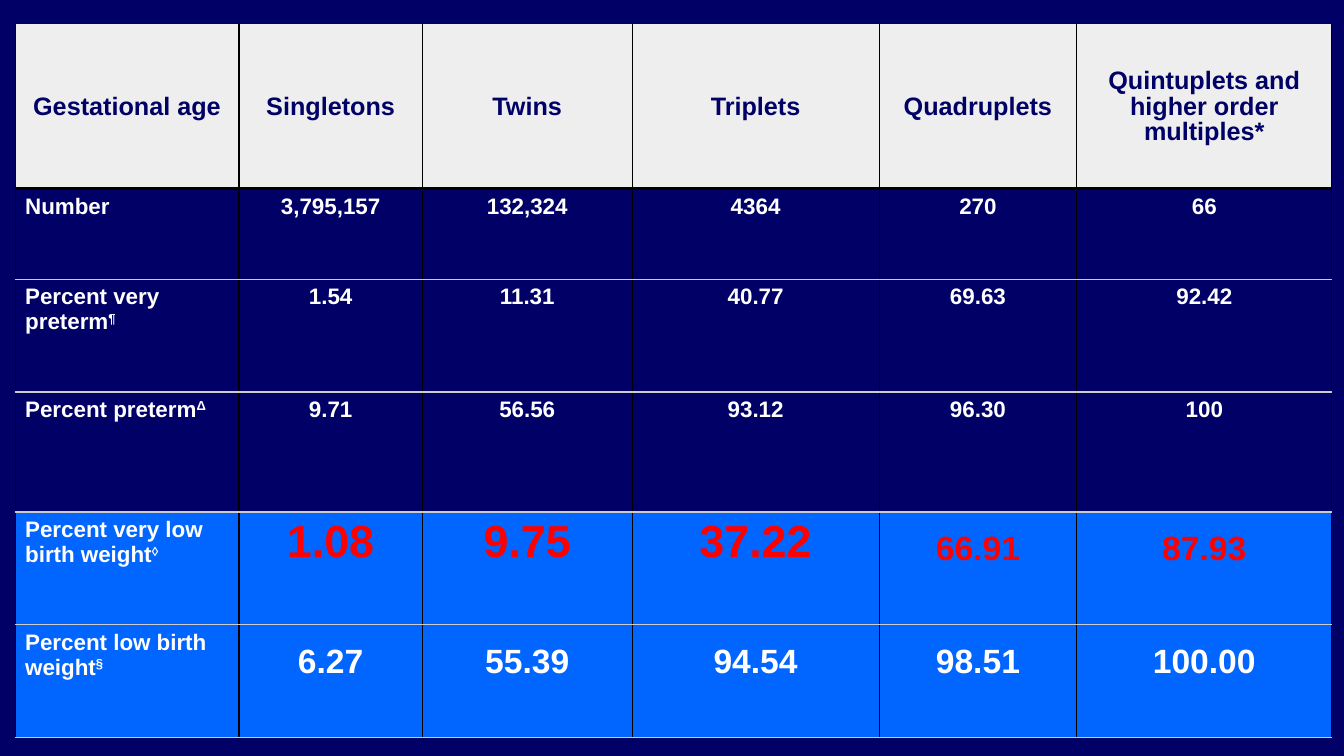
from pptx import Presentation
from pptx.dml.color import RGBColor
from pptx.enum.text import MSO_ANCHOR, PP_ALIGN
from pptx.oxml.ns import qn
from pptx.util import Inches, Pt
from lxml.etree import SubElement

NAVY, BLUE, WHITE, RED = "000066", "0066FF", "FFFFFF", "FF0000"
LIGHT_GRAY, RULE_GRAY, BLACK = "EEEEEE", "CCCCCC", "000000"
COLUMN_WIDTHS = [2.22, 1.82, 2.08, 2.45, 1.96, 2.53]
ROW_HEIGHTS = [1.63, 0.9, 1.12, 1.19, 1.12, 1.12]
HEADINGS = ["Gestational age", "Singletons", "Twins", "Triplets", "Quadruplets",
            "Quintuplets and higher order multiples*"]
MEASURES = [
    ("Number", "", ["3,795,157", "132,324", "4364", "270", "66"]),
    ("Percent very preterm", "¶", ["1.54", "11.31", "40.77", "69.63", "92.42"]),
    ("Percent preterm", "Δ", ["9.71", "56.56", "93.12", "96.30", "100"]),
    ("Percent very low birth weight", "◊", ["1.08", "9.75", "37.22", "66.91", "87.93"]),
    ("Percent low birth weight", "§", ["6.27", "55.39", "94.54", "98.51", "100.00"]),
]
VERY_LOW_WEIGHT_ROW, LOW_WEIGHT_ROW = 4, 5


def color(hex_string):
    return RGBColor.from_string(hex_string)


def set_border(cell, side, hex_string, width):
    line = SubElement(cell._tc.get_or_add_tcPr(), qn(f"a:ln{side}"), w=str(Pt(width)))
    if width:
        fill = SubElement(line, qn("a:solidFill"))
        SubElement(fill, qn("a:srgbClr"), val=hex_string)
    else:
        SubElement(line, qn("a:noFill"))


def set_borders(cell, row):
    rules = {0: (BLACK, 0), 1: (BLACK, 2.25)}
    set_border(cell, "L", BLACK, 1)
    set_border(cell, "R", BLACK, 1)
    set_border(cell, "T", *rules.get(row, (RULE_GRAY, 1)))
    set_border(cell, "B", *rules.get(row + 1, (RULE_GRAY, 1)))


def set_fill(cell, hex_string):
    if hex_string:
        cell.fill.solid()
        cell.fill.fore_color.rgb = color(hex_string)
    else:
        cell.fill.background()


def write_cell(cell, text, size, hex_string, alignment, mark=""):
    paragraph = cell.text_frame.paragraphs[0]
    paragraph.alignment = alignment
    paragraph.line_spacing = Pt(18)
    paragraph.font.name = "Arial"
    paragraph.font.size = Pt(size)
    paragraph.font.bold = True
    paragraph.font.color.rgb = color(hex_string)
    paragraph.add_run().text = text
    if mark:
        superscript = paragraph.add_run()
        superscript.text = mark
        superscript.font._element.set("baseline", "30000")


def value_style(row, column):
    if row == VERY_LOW_WEIGHT_ROW:
        return (32 if column <= 3 else 24), RED
    return (24 if row == LOW_WEIGHT_ROW else 16), WHITE


def add_header(table):
    for column, heading in enumerate(HEADINGS):
        cell = table.cell(0, column)
        set_borders(cell, 0)
        set_fill(cell, LIGHT_GRAY)
        cell.margin_top = Inches(0.08)
        cell.vertical_anchor = MSO_ANCHOR.MIDDLE
        write_cell(cell, heading, 18, NAVY, PP_ALIGN.CENTER)


def add_measure(table, row, label, mark, values):
    weight_row = row >= VERY_LOW_WEIGHT_ROW
    for column in range(len(HEADINGS)):
        cell = table.cell(row, column)
        set_borders(cell, row)
        set_fill(cell, BLUE if weight_row else None)
        if column == 0:
            write_cell(cell, label, 16, WHITE, PP_ALIGN.LEFT, mark)
        else:
            if weight_row:
                cell.margin_top = Inches(0.3)
            size, hex_string = value_style(row, column)
            write_cell(cell, values[column - 1], size, hex_string, PP_ALIGN.CENTER)


def add_birth_table(slide, left, top, width, height):
    frame = slide.shapes.add_table(len(ROW_HEIGHTS), len(COLUMN_WIDTHS), Inches(left),
                                   Inches(top), Inches(width), Inches(height))
    table = frame.table
    table.first_row = False
    table.horz_banding = False
    for column, column_width in zip(table.columns, COLUMN_WIDTHS):
        column.width = Inches(column_width)
    for row, row_height in zip(table.rows, ROW_HEIGHTS):
        row.height = Inches(row_height)
    add_header(table)
    for row, (label, mark, values) in enumerate(MEASURES, start=1):
        add_measure(table, row, label, mark, values)


def main():
    presentation = Presentation()
    presentation.slide_width = Inches(13.33)
    presentation.slide_height = Inches(7.5)
    slide = presentation.slides.add_slide(presentation.slide_layouts[6])
    slide.background.fill.solid()
    slide.background.fill.fore_color.rgb = color(NAVY)
    add_birth_table(slide, 0.15, 0.24, sum(COLUMN_WIDTHS), sum(ROW_HEIGHTS))
    presentation.save("out.pptx")


if __name__ == "__main__":
    main()
